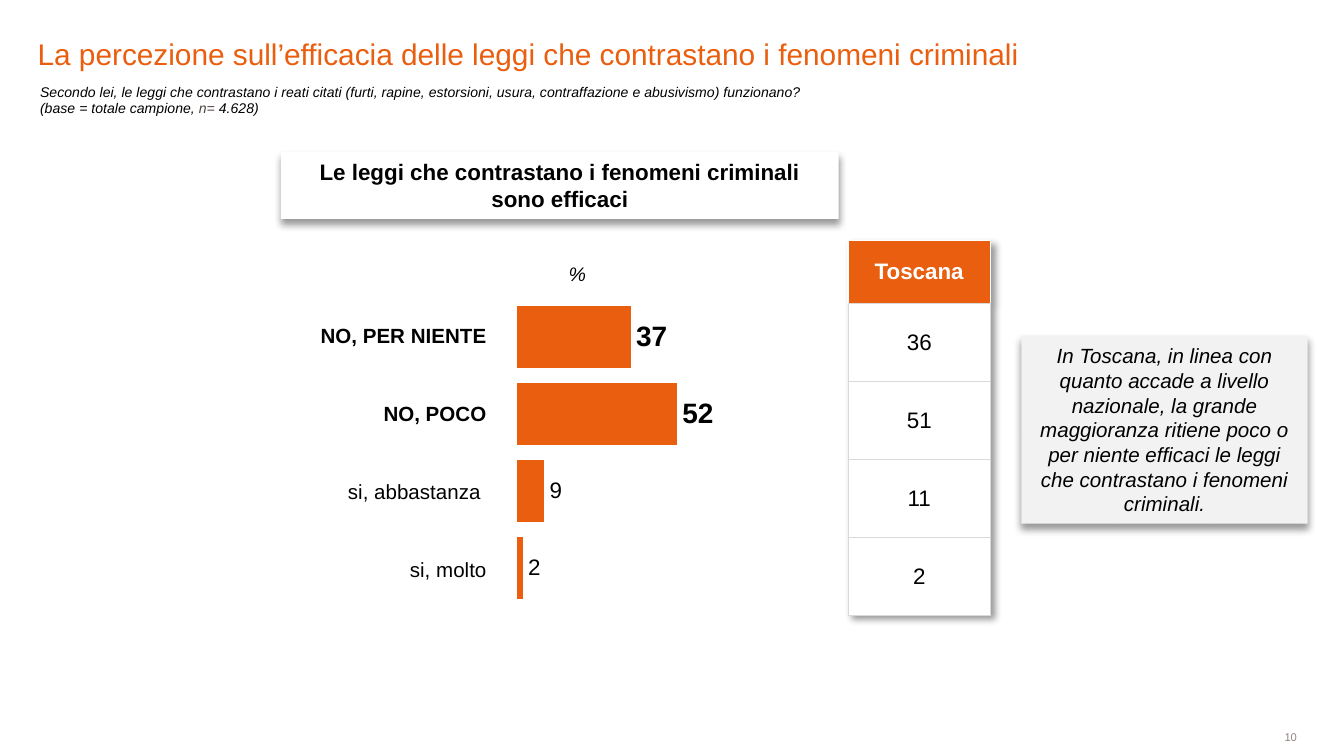
from lxml.etree import SubElement
from pptx import Presentation
from pptx.chart.data import CategoryChartData
from pptx.dml.color import RGBColor
from pptx.enum.chart import XL_CHART_TYPE as ChartType, XL_LABEL_POSITION as LabelPosition
from pptx.enum.shapes import MSO_SHAPE as Shape
from pptx.enum.text import MSO_ANCHOR as Anchor, PP_ALIGN as Align
from pptx.oxml.ns import qn
from pptx.util import Inches, Pt

ORANGE, BLACK, WHITE = "E95E0F", "000000", "FFFFFF"
LIGHT, RULE, GREY, BROWN = "F2F2F2", "D9D9D9", "928580", "4A423F"
ANSWER_ROW, HEADER_ROW = 10.3, 8.35
ANSWERS = ["NO, PER NIENTE", "NO, POCO", "si, abbastanza ", "si, molto"]
NATIONAL = [37, 52, 9, 2]
TOSCANA = [36, 51, 11, 2]

presentation = Presentation()
presentation.slide_width = Inches(10)
presentation.slide_height = presentation.slide_width * 9 // 16
COLUMN = presentation.slide_width / 100
ROW = presentation.slide_height / 100


def grid(left, top, width, height):
    """Turn hundredths of the slide into lengths."""
    return [int(value * unit) for value, unit in
            zip((left, top, width, height), (COLUMN, ROW, COLUMN, ROW))]


def color(value):
    return RGBColor.from_string(value)


def set_font(font, size, value=BLACK, **styles):
    for name, setting in {"name": "Arial", "size": Pt(size), "bold": False,
                          "italic": False, **styles}.items():
        setattr(font, name, setting)
    font.color.rgb = color(value)


def write(frame, paragraphs, size, align=Align.LEFT, anchor=Anchor.TOP,
          margins=None, value=BLACK, **styles):
    """Fill a frame; each paragraph is a list of (text, colour or None)."""
    frame.word_wrap = True
    frame.vertical_anchor = anchor
    if margins is not None:
        for side in ("left", "top", "right", "bottom"):
            setattr(frame, f"margin_{side}", Inches(margins))
    for index, runs in enumerate(paragraphs):
        paragraph = frame.add_paragraph() if index else frame.paragraphs[0]
        paragraph.alignment = align
        for text, run_color in runs:
            run = paragraph.add_run()
            run.text = text
            set_font(run.font, size, run_color or value, **styles)


def add_shadow(effects, angle):
    shadow = SubElement(effects, qn("a:outerShdw"), blurRad=str(Pt(4)), dist=str(Pt(3)),
                        dir=str(angle * 60000), algn="t", rotWithShape="0")
    shade = SubElement(shadow, qn("a:srgbClr"), val=BLACK)
    SubElement(shade, qn("a:alpha"), val="40000")


def add_text(slide, box, paragraphs, size, **options):
    write(slide.shapes.add_textbox(*box).text_frame, paragraphs, size, **options)


def add_card(slide, box, text, size, fill, **styles):
    card = slide.shapes.add_shape(Shape.RECTANGLE, *box)
    card.fill.solid()
    card.fill.fore_color.rgb = color(fill)
    card.line.fill.background()
    card.shadow.inherit = False
    add_shadow(card._element.spPr.find(qn("a:effectLst")), 90)
    write(card.text_frame, [[(text, None)]], size, align=Align.CENTER,
          anchor=Anchor.MIDDLE, **styles)


def set_borders(cell, borders):
    properties = cell._tc.get_or_add_tcPr()
    for index, side in enumerate("LRTB"):
        value, width = borders[side]
        line = SubElement(properties, qn(f"a:ln{side}"), w=str(Pt(width)))
        fill = SubElement(line, qn("a:solidFill"))
        SubElement(fill, qn("a:srgbClr"), val=value)
        properties.insert(index, line)


def add_column_table(slide, box, heights):
    """Add a plain one-column table and return it with its cells."""
    table = slide.shapes.add_table(len(heights), 1, *box).table
    table.first_row = table.horz_banding = False
    for row, height in zip(table.rows, heights):
        row.height = int(height * ROW)
    return table, [row.cells[0] for row in table.rows]


def write_cell(cell, text, size, align, borders, fill=None, narrow=True, **styles):
    if fill:
        cell.fill.solid()
        cell.fill.fore_color.rgb = color(fill)
    else:
        cell.fill.background()
    if narrow:
        for side, margin in {"left": 0.01, "top": 0.01, "right": 0.01, "bottom": 0}.items():
            setattr(cell, f"margin_{side}", Inches(margin))
    cell.vertical_anchor = Anchor.MIDDLE
    paragraph = cell.text_frame.paragraphs[0]
    paragraph.alignment = align
    run = paragraph.add_run()
    run.text = text
    set_font(run.font, size, **styles)
    set_borders(cell, borders)


def add_answers(slide, box):
    cells = add_column_table(slide, box, [ANSWER_ROW] * len(ANSWERS))[1]
    for index, (cell, answer) in enumerate(zip(cells, ANSWERS)):
        write_cell(cell, answer, 11, Align.RIGHT, dict.fromkeys("LRTB", (WHITE, 1)),
                   bold=index < 2)


def add_region(slide, box):
    table, cells = add_column_table(slide, box, [HEADER_ROW] + [ANSWER_ROW] * len(TOSCANA))
    effects = SubElement(table._tbl.tblPr, qn("a:effectLst"))
    table._tbl.tblPr.insert(0, effects)
    add_shadow(effects, 45)
    thin = dict.fromkeys("LRTB", (RULE, 0.25))
    header = {**dict.fromkeys("LRT", (WHITE, 1)), "B": (RULE, 0.25)}
    write_cell(cells[0], "Toscana", 12, Align.CENTER, header, ORANGE, narrow=False,
               value=WHITE, bold=True)
    for cell, share in zip(cells[1:], TOSCANA):
        write_cell(cell, str(share), 12, Align.CENTER, thin, WHITE)


def add_bars(slide, box):
    data = CategoryChartData(number_format="0")
    data.categories = ["1", "2", "3", "4"]
    data.add_series("Series 1", NATIONAL)
    chart = slide.shapes.add_chart(ChartType.BAR_CLUSTERED, *box, data).chart
    chart.has_legend = chart.has_title = False
    set_font(chart.font, 13.5)
    chart.category_axis.reverse_order = True
    chart.category_axis.visible = False
    for name, setting in {"minimum_scale": 0, "maximum_scale": 100, "major_unit": 10,
                          "has_major_gridlines": False, "visible": False}.items():
        setattr(chart.value_axis, name, setting)
    plot = chart.plots[0]
    plot.gap_width, plot.vary_by_categories = 24, False
    series = plot.series[0]
    series.format.fill.solid()
    series.format.fill.fore_color.rgb = color(ORANGE)
    series.data_labels.show_value = True
    set_font(series.data_labels.font, 12)
    series.data_labels.position = LabelPosition.OUTSIDE_END
    for index in range(2):
        label = series.points[index].data_label
        set_font(label.font, 15, bold=True)
        label.position = LabelPosition.OUTSIDE_END
    area = chart._chartSpace.chart.plotArea
    for layout in area.findall(qn("c:layout")):
        area.remove(layout)
    layout = SubElement(area, qn("c:layout"))
    area.insert(0, layout)
    manual = SubElement(layout, qn("c:manualLayout"))
    for tag, setting in {"layoutTarget": "inner", "xMode": "edge", "yMode": "edge",
                         "x": "0.28", "y": "0", "w": "0.5", "h": "0.72"}.items():
        SubElement(manual, qn(f"c:{tag}"), val=setting)


def add_heading(slide, title_box, question_box):
    title = slide.shapes.title
    title.left, title.top, title.width, title.height = title_box
    write(title.text_frame, [[("La percezione sull’efficacia delle leggi che contrastano "
                               "i fenomeni criminali", ORANGE)]],
          16, anchor=Anchor.BOTTOM, margins=0)
    add_text(slide, question_box,
             [[("Secondo lei, le leggi che contrastano i reati citati (furti, rapine, "
                "estorsioni, usura, contraffazione e abusivismo) funzionano?", None)],
              [("(base = totale campione, ", None), ("n=", BROWN), (" 4.628)", None)]],
             7.5, italic=True)


def main():
    slide = presentation.slides.add_slide(presentation.slide_layouts[5])
    add_heading(slide, grid(2.8, 2.84, 81.9, 6.57), grid(2, 10.12, 69.7, 6.22))
    add_card(slide, grid(20.9, 20.07, 41.5, 8.88),
             "Le leggi che contrastano i fenomeni criminali sono efficaci", 12, WHITE, bold=True)
    add_bars(slide, grid(25.6, 39.47, 45.9, 56.71))
    add_answers(slide, grid(20.9, 39.3, 15.4, 4 * ANSWER_ROW))
    add_text(slide, grid(41.5, 34.64, 2.9, 3.2), [[("%", None)]], 10.5,
             align=Align.CENTER, anchor=Anchor.MIDDLE, margins=0, italic=True)
    add_region(slide, grid(63.1, 31.79, 10.6, HEADER_ROW + 4 * ANSWER_ROW))
    add_card(slide, grid(76, 44.4, 21.3, 24.87),
             "In Toscana, in linea con quanto accade a livello nazionale, la grande "
             "maggioranza ritiene poco o per niente efficaci le leggi che contrastano "
             "i fenomeni criminali.", 11, LIGHT, italic=True)
    add_text(slide, grid(83.1, 96.63, 13.4, 1.6), [[("10", GREY)]], 6,
             align=Align.RIGHT, anchor=Anchor.MIDDLE, margins=0)
    presentation.save("out.pptx")


if __name__ == "__main__":
    main()
